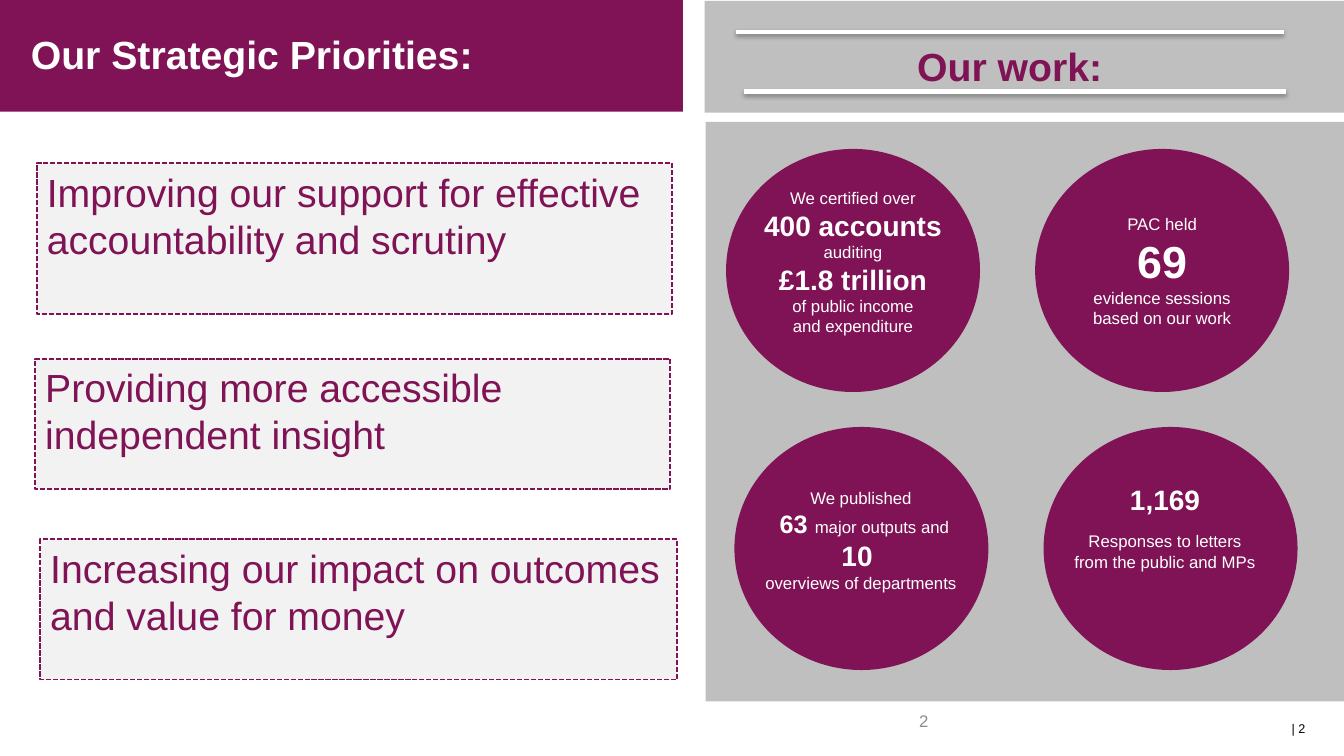
from copy import deepcopy
from dataclasses import dataclass

from lxml.etree import SubElement
from pptx import Presentation
from pptx.dml.color import RGBColor
from pptx.enum.dml import MSO_LINE
from pptx.enum.shapes import MSO_CONNECTOR, MSO_SHAPE
from pptx.enum.text import MSO_ANCHOR, PP_ALIGN
from pptx.oxml.ns import qn
from pptx.util import Inches, Pt

# The slide is a grid of 160 columns by 90 rows.
COLS, ROWS = 160, 90
PLUM, GREY, PALE, WHITE = "7F1355", "BFBFBF", "F2F2F2", "FFFFFF"
LEFT, CENTER, RIGHT = PP_ALIGN.LEFT, PP_ALIGN.CENTER, PP_ALIGN.RIGHT
TOP, MIDDLE = MSO_ANCHOR.TOP, MSO_ANCHOR.MIDDLE


@dataclass
class Box:
    col: float
    row: float
    cols: float
    rows: float


@dataclass
class Run:
    text: str
    size: float = 12
    bold: bool = False
    color: str = WHITE
    br: bool = False


@dataclass
class Para:
    runs: list[Run]
    align: PP_ALIGN = CENTER
    before: float = 0
    spacing: float = 1


@dataclass
class Fact:
    """A circle; its text lies in its own box, or in the circle if there is none."""
    across: int
    down: int
    paras: list[Para]
    text_box: Box | None = None


PRIORITIES = [
    (Box(4.4, 19.4, 75.6, 18), "Improving our support for effective accountability and scrutiny"),
    (Box(4.2, 42.7, 75.6, 15.5), "Providing more accessible independent insight"),
    (Box(4.8, 64.2, 75.8, 16.7), "Increasing our impact on outcomes and value for money"),
]

FACTS = [
    Fact(0, 0, [Para([
        Run("We certified over", br=True),
        Run("400 accounts", 20, True, br=True),
        Run("auditing", br=True),
        Run("£1.8 trillion", 20, True, br=True),
        Run("of public income", br=True),
        Run("and expenditure")], before=0.5)], Box(89.6, 21.8, 23.9, 22)),
    Fact(1, 0, [Para([
        Run("PAC held", br=True),
        Run("69", 32, True, br=True),
        Run("evidence sessions based on our work")], before=0.5)]),
    Fact(0, 1, [
        Para([Run("We published", br=True),
              Run(" 63 ", 18, True),
              Run("major outputs and "),
              Run("10 ", 20, True)], before=0.5),
        Para([Run("overviews of departments")], before=0.5)], Box(89.3, 57.5, 26.4, 20.6)),
    Fact(1, 1, [
        Para([Run("1,169", 20, True)], before=11),
        Para([Run("Responses to letters from the public and MPs")], before=11)],
        Box(126.2, 56.8, 25, 22)),
]

TEXTS = [
    (Box(2.5, 3.6, 70, 6), TOP,
     Para([Run("Our Strategic Priorities:", 28, True)], LEFT, spacing=0.9)),
    (Box(87.6, 4.4, 65.2, 4), TOP,
     Para([Run("Our work:", 28, True, PLUM)], before=5.6)),
    (Box(84.7, 83.4, 27, 4.8), MIDDLE, Para([Run("2", color="8C8C8C")], RIGHT)),
    (Box(149, 85.2, 7.6, 3), TOP, Para([Run("| 2", 9, color="000000")], RIGHT)),
]

PANELS = [
    (Box(0, 0, 81.3, 13.3), PLUM),
    (Box(83.9, 0.1, 76.1, 13.3), GREY),
    (Box(84, 14.5, 76, 69), GREY),
]

prs = Presentation()
prs.slide_width, prs.slide_height = Inches(13.33), Inches(7.5)
s = prs.slides.add_slide(prs.slide_layouts[6])


def x(cols: float) -> int:
    return round(prs.slide_width * cols / COLS)


def y(rows: float) -> int:
    return round(prs.slide_height * rows / ROWS)


def place(box: Box) -> tuple[int, int, int, int]:
    return x(box.col), y(box.row), x(box.cols), y(box.rows)


def rgb(color: str) -> RGBColor:
    return RGBColor.from_string(color)


def write(sp, paras: list[Para], anchor: MSO_ANCHOR = TOP) -> None:
    tf = sp.text_frame
    tf.word_wrap = True
    tf.vertical_anchor = anchor
    for i, para in enumerate(paras):
        p = tf.add_paragraph() if i else tf.paragraphs[0]
        p.alignment = para.align
        p.space_before = Pt(para.before)
        p.line_spacing = para.spacing
        for run in para.runs:
            r = p.add_run()
            r.text = run.text
            r.font.name = "Arial"
            r.font.size = Pt(run.size)
            r.font.bold = run.bold
            r.font.color.rgb = rgb(run.color)
            if run.br:
                p.add_line_break()
                p._p[-1].append(deepcopy(r._r.rPr))


def add_text(box: Box, paras: list[Para], anchor: MSO_ANCHOR = TOP) -> None:
    write(s.shapes.add_textbox(*place(box)), paras, anchor)


def add_filled(kind: MSO_SHAPE, box: Box, fill: str, line: float = 0):
    """Add a shape with a plum outline, or none when line is 0."""
    sp = s.shapes.add_shape(kind, *place(box))
    sp.shadow.inherit = False
    sp.fill.solid()
    sp.fill.fore_color.rgb = rgb(fill)
    if line:
        sp.line.color.rgb = rgb(PLUM)
        sp.line.width = Pt(line)
    else:
        sp.line.fill.background()
    return sp


def add_rule(start: float, end: float, row: float) -> None:
    """Add a white horizontal line with a soft shadow below it."""
    cx = s.shapes.add_connector(MSO_CONNECTOR.STRAIGHT, x(start), y(row), x(end), y(row))
    cx.line.color.rgb = rgb(WHITE)
    cx.line.width = Pt(3)
    effects = SubElement(cx._element.spPr, qn("a:effectLst"))
    shadow = SubElement(effects, qn("a:outerShdw"), blurRad=str(Pt(3.1)), dist=str(Pt(1.8)),
                        dir="5400000", rotWithShape="0")
    black = SubElement(shadow, qn("a:srgbClr"), val="000000")
    SubElement(black, qn("a:alpha"), val="35000")


def add_fact(fact: Fact) -> None:
    # The lower row of circles sits one column further right.
    circle = Box(86.6 + 36.8 * fact.across + fact.down, 17.9 + 33.1 * fact.down, 29.9, 28.6)
    sp = add_filled(MSO_SHAPE.OVAL, circle, PLUM, 2)
    if fact.text_box:
        add_text(fact.text_box, fact.paras)
    else:
        write(sp, fact.paras, MIDDLE)


def main() -> None:
    for box, fill in PANELS:
        add_filled(MSO_SHAPE.RECTANGLE, box, fill)
    for box, anchor, para in TEXTS:
        add_text(box, [para], anchor)
    add_rule(87.6, 152.8, 3.8)
    add_rule(88.6, 153.1, 10.9)
    for box, text in PRIORITIES:
        sp = add_filled(MSO_SHAPE.RECTANGLE, box, PALE, 1.25)
        sp.line.dash_style = MSO_LINE.SQUARE_DOT
        write(sp, [Para([Run(text, 28, color=PLUM)], LEFT, before=10)])
    for fact in FACTS:
        add_fact(fact)
    prs.save("out.pptx")


if __name__ == "__main__":
    main()
